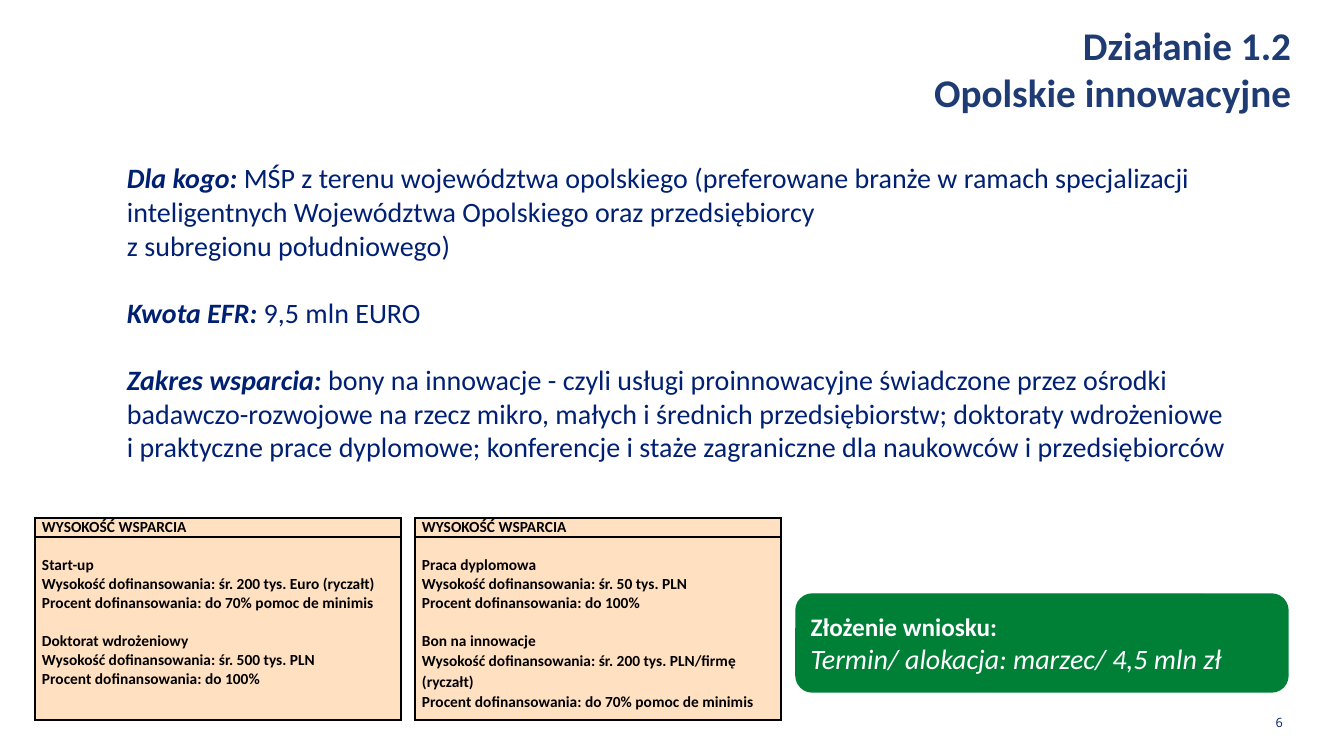
"""Build the slide on support for innovation in the Opole region."""
from dataclasses import dataclass
from lxml.etree import SubElement
from pptx import Presentation
from pptx.dml.color import RGBColor
from pptx.enum.shapes import MSO_SHAPE
from pptx.enum.text import MSO_ANCHOR, PP_ALIGN
from pptx.oxml.ns import qn
from pptx.util import Pt


@dataclass(frozen=True)
class Theme:
    font: str = "Calibri"
    tiny: str = "Open Sans"
    navy: str = "002073"
    blue: str = "1F3B73"
    green: str = "008037"
    peach: str = "FFE0C1"
    white: str = "FFFFFF"
    black: str = "000000"
    head: float = 28
    body: float = 20
    call: float = 18
    cell: float = 11
    page: float = 9.1


THEME = Theme()
LABEL = {"bold": True, "italic": True}
PLAIN = {"bold": False, "italic": False}
BOLD = {"bold": True}

FACTS = [
    ("Dla kogo: ", "MŚP z terenu województwa opolskiego (preferowane branże w ramach "
     "specjalizacji inteligentnych Województwa Opolskiego oraz przedsiębiorcy\n"
     "z subregionu południowego)"),
    ("Kwota EFR: ", "9,5 mln EURO"),
    ("Zakres wsparcia: ", "bony na innowacje - czyli usługi proinnowacyjne świadczone przez "
     "ośrodki badawczo-rozwojowe na rzecz mikro, małych i średnich przedsiębiorstw; "
     "doktoraty wdrożeniowe i praktyczne prace dyplomowe; konferencje i staże "
     "zagraniczne dla naukowców i przedsiębiorców"),
]
GRANTS = [
    [("Start-up", "śr. 200 tys. Euro (ryczałt)", "do 70% pomoc de minimis", 1),
     ("Doktorat wdrożeniowy", "śr. 500 tys. PLN", "do 100%", 1)],
    [("Praca dyplomowa", "śr. 50 tys. PLN", "do 100%", 1),
     ("Bon na innowacje", "śr. 200 tys. PLN/firmę (ryczałt)",
      "do 70% pomoc de minimis", 1.07)],
]


def px(num):
    """Turn pixels into EMU."""
    return round(num * 914400 / 100.8)


def apply(item, values):
    """Set each named value on an object."""
    for name, value in values.items():
        setattr(item, name, value)


def write(para, text, size, color, style, face=THEME.font):
    """Add styled text to a paragraph, with line breaks at newlines."""
    for num, line in enumerate(text.split("\n")):
        if num:
            para.add_line_break()
        run = para.add_run()
        run.text = line
        apply(run.font, {"name": face, "size": Pt(size), **style})
        run.font.color.rgb = RGBColor.from_string(color)


def grow(frame, first):
    """Return the first paragraph or a new one."""
    return frame.paragraphs[0] if first else frame.add_paragraph()


def add_box(slide, *rect, **values):
    """Add a wrapping text box and return its frame."""
    frame = slide.shapes.add_textbox(*map(px, rect)).text_frame
    apply(frame, {"word_wrap": True, **values})
    return frame


def add_title(slide):
    """Add the two-line title."""
    frame = add_box(slide, 621, 16, 680, 48)
    for num, line in enumerate(("Działanie 1.2", "Opolskie innowacyjne")):
        para = grow(frame, num == 0)
        para.alignment = PP_ALIGN.RIGHT
        write(para, line, THEME.head, THEME.blue, BOLD)


def add_facts(slide):
    """Add the labelled facts."""
    frame = add_box(slide, 117, 156, 1124, 418)
    for num, (label, text) in enumerate(FACTS):
        para = grow(frame, num == 0)
        if num:
            para.space_before = Pt(24)
        write(para, label, THEME.body, THEME.navy, LABEL)
        write(para, text, THEME.body, THEME.navy, PLAIN)


def add_call(slide):
    """Add the green call box."""
    shape = slide.shapes.add_shape(MSO_SHAPE.ROUNDED_RECTANGLE,
                                   *map(px, (796, 594, 492, 98)))
    shape.shadow.inherit = False
    shape.fill.solid()
    for fill in (shape.fill.fore_color, shape.line.color):
        fill.rgb = RGBColor.from_string(THEME.green)
    shape.line.width = Pt(1)
    frame = shape.text_frame
    apply(frame, {"word_wrap": True, "vertical_anchor": MSO_ANCHOR.MIDDLE})
    lines = [("Złożenie wniosku:", THEME.call, BOLD),
             ("Termin/ alokacja: marzec/ 4,5 mln zł", THEME.body, {"italic": True})]
    for num, (text, size, style) in enumerate(lines):
        para = grow(frame, num == 0)
        para.alignment = PP_ALIGN.LEFT
        write(para, text, size, THEME.white, style)


def dress(cell, top):
    """Give a cell its margins, borders and fill."""
    apply(cell, {"margin_left": px(7), "margin_right": px(7),
                 "margin_top": px(top), "margin_bottom": 0})
    props = cell._tc.get_or_add_tcPr()
    for side in ("lnL", "lnR", "lnT", "lnB"):
        line = SubElement(props, qn(f"a:{side}"), w=str(Pt(1)))
        fill = SubElement(line, qn("a:solidFill"))
        SubElement(fill, qn("a:srgbClr"), val=THEME.black)
    cell.fill.solid()
    cell.fill.fore_color.rgb = RGBColor.from_string(THEME.peach)


def add_grants(slide, left, groups):
    """Add a table of support levels."""
    table = slide.shapes.add_table(2, 1, *map(px, (left, 518, 366, 202))).table
    apply(table, {"first_row": False, "horz_banding": False})
    for row, high in zip(table.rows, (19, 183)):
        row.height = px(high)
    head, body = table.cell(0, 0), table.cell(1, 0)
    dress(head, 0)
    dress(body, 19)
    head.vertical_anchor = MSO_ANCHOR.MIDDLE
    write(head.text_frame.paragraphs[0], "WYSOKOŚĆ WSPARCIA",
          THEME.cell, THEME.black, BOLD)
    for num, (name, sum_, share, space) in enumerate(groups):
        para = grow(body.text_frame, num == 0)
        if num:
            para.space_before = Pt(13.4)
        write(para, name, THEME.cell, THEME.black, BOLD)
        for label, text in (("Wysokość", sum_), ("Procent", share)):
            para = body.text_frame.add_paragraph()
            para.line_spacing = float(space)
            write(para, f"{label} dofinansowania: {text}",
                  THEME.cell, THEME.black, BOLD)


def add_page(slide):
    """Add the page number."""
    frame = add_box(slide, 1147, 713, 136, 18, margin_left=0, margin_right=0,
                    margin_top=0, margin_bottom=0,
                    vertical_anchor=MSO_ANCHOR.MIDDLE)
    para = frame.paragraphs[0]
    para.alignment = PP_ALIGN.RIGHT
    write(para, "6", THEME.page, THEME.navy, {}, THEME.tiny)


def main():
    """Build and save the slide."""
    deck = Presentation()
    apply(deck, {"slide_width": px(1344), "slide_height": px(756)})
    slide = deck.slides.add_slide(deck.slide_layouts[6])
    add_page(slide)
    add_facts(slide)
    add_title(slide)
    add_call(slide)
    for num, groups in enumerate(GRANTS):
        add_grants(slide, 35 + 380 * num, groups)
    deck.save("out.pptx")


if __name__ == "__main__":
    main()
